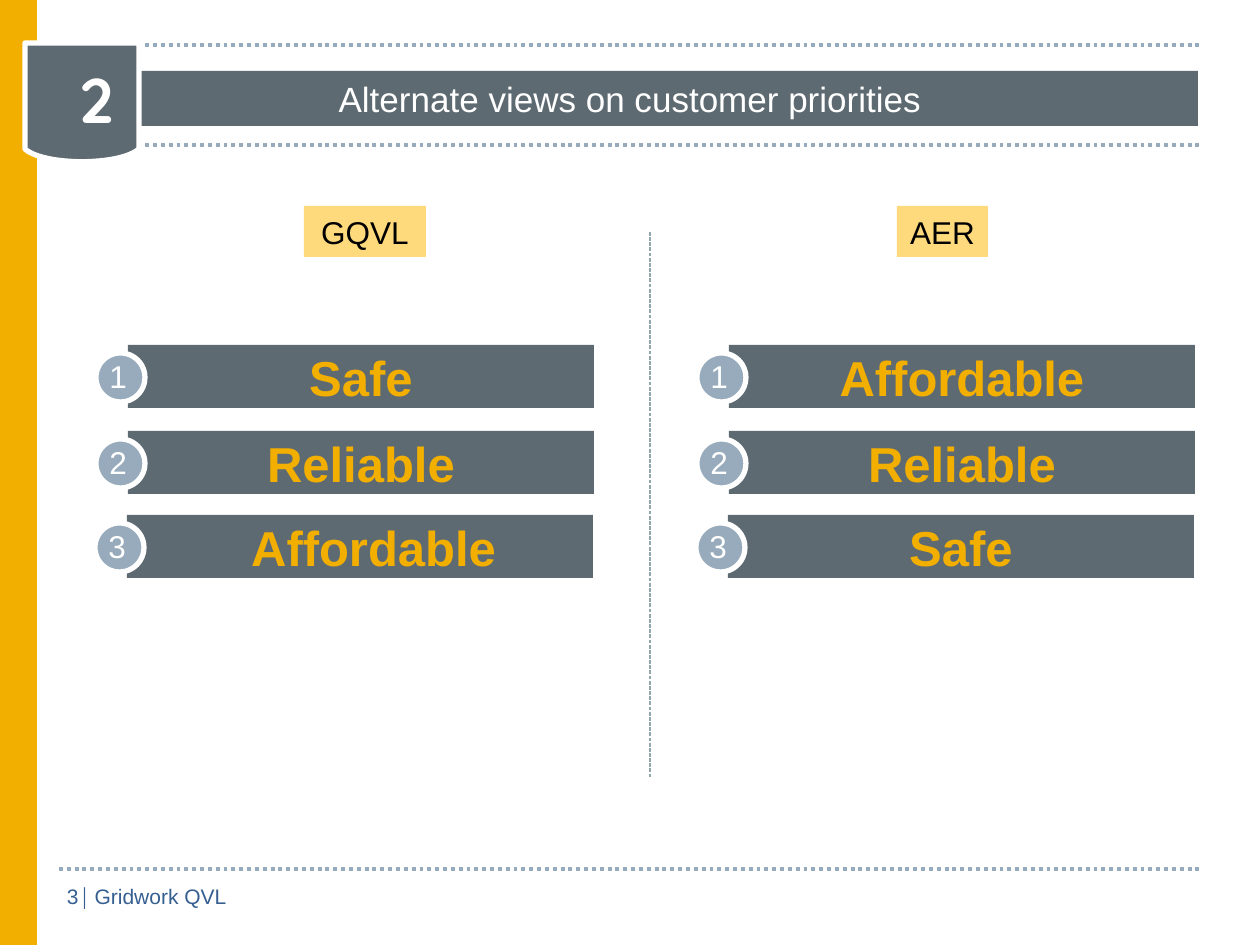
import pptx
import pptx.dml.color
import pptx.enum.dml
import pptx.enum.shapes
import pptx.enum.text
import pptx.oxml
import pptx.oxml.ns
import pptx.util

PX = 914400 // 126
COLORS = {
    "white": "FFFFFF", "black": "000000", "gold": "F2AF00", "pale": "FFDA7D",
    "slate": "5E6A71", "mist": "97ABBC", "divider": "91A7AB", "footer": "365F91",
}
SHAPE = pptx.enum.shapes.MSO_SHAPE
ALIGN = pptx.enum.text.PP_ALIGN
ANCHOR = pptx.enum.text.MSO_ANCHOR
DASH = pptx.enum.dml.MSO_LINE

# Content
TITLE = "Alternate views on customer priorities"
SECTION = "2"
PAGE = "3"
FOOTER = [("│ ", "Calibri"), ("Gridwork QVL", "Arial")]
VIEWS = [  # heading, heading box, left of bars, priorities with extra left inset
    ("GQVL", (304, 206, 122, 51), 128,
     [("Safe", 0), ("Reliable", 0), ("Affordable", 27)]),
    ("AER", (897, 206, 91, 51), 729,
     [("Affordable", 0), ("Reliable", 0), ("Safe", 0)]),
]

# Layout in px
ROWS = [(345, 0), (431, 0), (515, -1)]  # top, sideways shift
BAR_W, BAR_H = 466, 63
RULES = [145, 45, 869]
RULE_ENDS = (59, 1201)

# Text formats
STYLES = {
    "title": {"size": 20, "color": "white"},
    "section": {"size": 36, "color": "white", "bold": True},
    "heading": {"size": 18, "color": "black"},
    "priority": {"size": 28, "color": "gold", "bold": True},
    "rank": {"size": 18, "color": "white"},
    "footer": {"size": 12, "color": "footer"},
}


def rgb(name):
    return pptx.dml.color.RGBColor.from_string(COLORS[name])


def emu(*lengths):
    return [pptx.util.Emu(round(length * PX)) for length in lengths]


def paint(shape, fill, outline=None):
    shape.shadow.inherit = False
    shape.fill.solid()
    shape.fill.fore_color.rgb = rgb(fill)
    if outline:
        shape.line.color.rgb = rgb(outline)
        shape.line.width = pptx.util.Pt(3)
    else:
        shape.line.fill.background()


def write(shape, runs, style, align=ALIGN.LEFT, anchor=ANCHOR.TOP, wrap=True, inset=0):
    frame = shape.text_frame
    settings = {
        "word_wrap": wrap,
        "auto_size": pptx.enum.text.MSO_AUTO_SIZE.NONE,
        "vertical_anchor": anchor,
        "margin_left": pptx.util.Inches(0.1) + inset * PX,
        "margin_right": pptx.util.Inches(0.1),
        "margin_top": pptx.util.Inches(0.05),
        "margin_bottom": pptx.util.Inches(0.05),
    }
    for key, value in settings.items():
        setattr(frame, key, value)
    paragraph = frame.paragraphs[0]
    paragraph.alignment = align
    for text, font_name in runs:
        run = paragraph.add_run()
        run.text = text
        font = {"name": font_name, "bold": False, **STYLES[style]}
        run.font.color.rgb = rgb(font.pop("color"))
        font["size"] = pptx.util.Pt(font["size"])
        for key, value in font.items():
            setattr(run.font, key, value)


def add_block(kind, box, fill, outline=None):
    block = shapes.add_shape(kind, *emu(*box))
    paint(block, fill, outline)
    return block


def add_label(box, runs, style, **options):
    write(shapes.add_textbox(*emu(*box)), runs, style, **options)


def add_rule(ends, color, width, dash):
    rule = shapes.add_connector(pptx.enum.shapes.MSO_CONNECTOR.STRAIGHT, *emu(*ends))
    rule.line.color.rgb = rgb(color)
    rule.line.width = pptx.util.Pt(width)
    rule.line.dash_style = dash
    rule._element.spPr.append(pptx.oxml.parse_xml(
        "<a:effectLst %s/>" % pptx.oxml.ns.nsdecls("a")))


def badge_outline(steps=24):
    """Square top corners and a curved foot."""
    foot = [(25, 149), (44, 166), (120, 166), (139, 149)]
    weights = [1, 3, 3, 1]
    points = []
    for step in range(steps + 1):
        t = step / steps
        points.append(tuple(
            sum(w * (1 - t) ** (3 - i) * t ** i * foot[i][axis]
                for i, w in enumerate(weights))
            for axis in (0, 1)))
    return [emu(*point) for point in points + [(139, 43), (25, 43)]]


deck = pptx.Presentation()
deck.slide_width, deck.slide_height = pptx.util.Inches(10), pptx.util.Inches(7.5)
slide = deck.slides.add_slide(deck.slide_layouts[5])
shapes = slide.shapes

# Dotted rules, footer and side band
for y in RULES:
    add_rule((RULE_ENDS[0], y, RULE_ENDS[1], y), "mist", 2.25, DASH.ROUND_DOT)
add_label((67, 877, 184, 38), FOOTER, "footer", wrap=False)
add_block(SHAPE.RECTANGLE, (0, 0, 37, 945), "gold")
add_label((33, 877, 58, 43), [(PAGE, "Arial")], "footer", align=ALIGN.RIGHT)

# Title bar
title = shapes.title
title.left, title.top, title.width, title.height = emu(62, 71, 1136, 55)
title.fill.solid()
title.fill.fore_color.rgb = rgb("slate")
write(title, [(TITLE, "Arial")], "title", align=ALIGN.CENTER, anchor=ANCHOR.MIDDLE)

# Section badge
outline = badge_outline()
builder = shapes.build_freeform(*outline[0])
builder.add_line_segments(outline[1:], close=True)
paint(builder.convert_to_shape(), "slate", "white")
add_label((67, 54, 60, 89), [(SECTION, "Quicksand")], "section", wrap=False)

# Divider between the two views
add_rule((650, 232, 650, 777), "divider", 0.75, DASH.SQUARE_DOT)

# Ranked priorities of each view
for heading, heading_box, left, priorities in VIEWS:
    write(add_block(SHAPE.RECTANGLE, heading_box, "pale"), [(heading, "Arial")],
          "heading", align=ALIGN.CENTER, anchor=ANCHOR.MIDDLE, wrap=False)
    for rank, ((priority, inset), (top, shift)) in enumerate(zip(priorities, ROWS), 1):
        x = left + shift
        bar = add_block(SHAPE.RECTANGLE, (x, top, BAR_W, BAR_H), "slate")
        write(bar, [(priority, "Arial")], "priority", align=ALIGN.CENTER,
              anchor=ANCHOR.MIDDLE, inset=inset)
        add_block(SHAPE.OVAL, (x - 32, top + 8, 49, 49), "mist", "white")
        add_label((x - 31, top + 6, 43, 50), [(str(rank), "Arial")], "rank", wrap=False)

deck.save("out.pptx")
